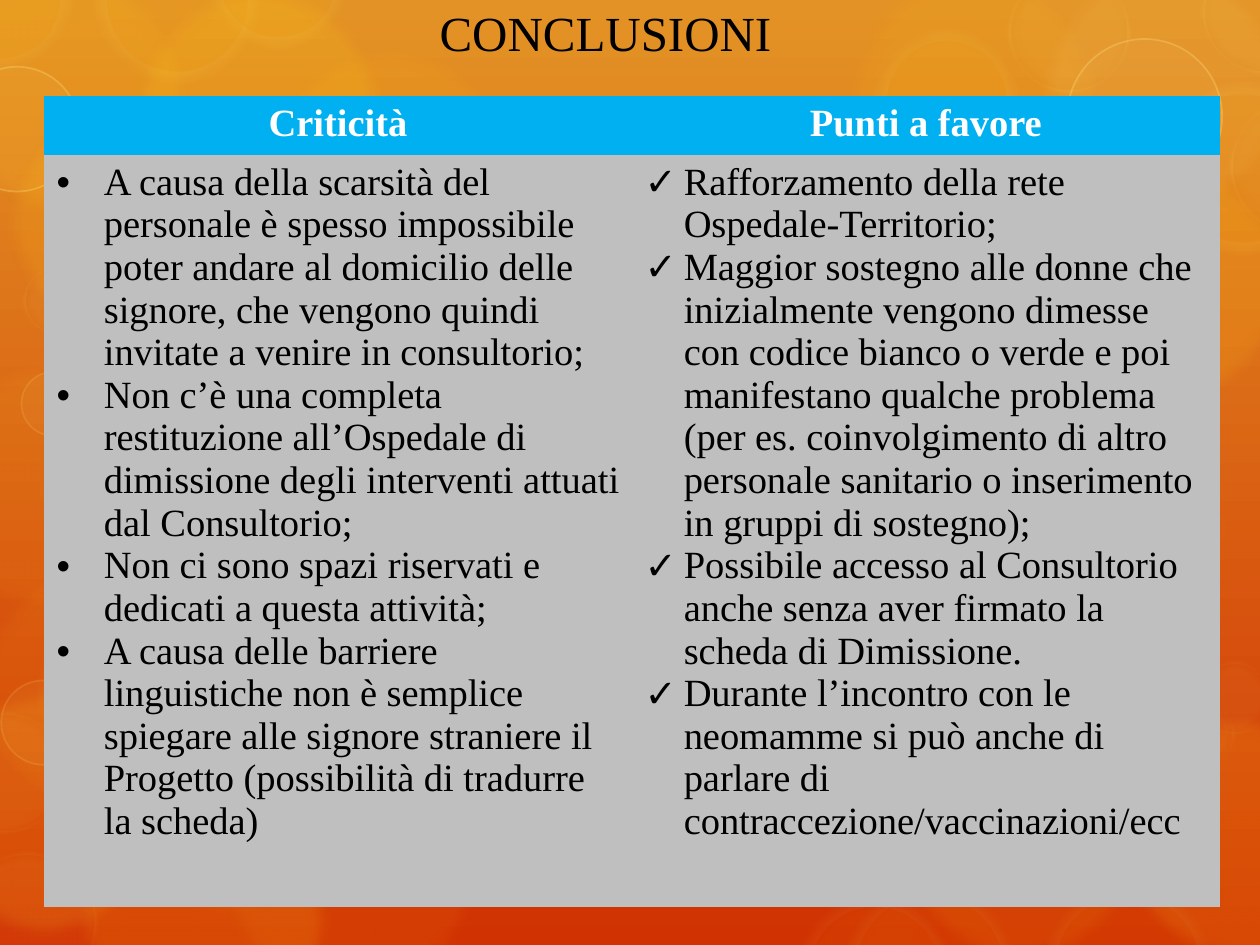
from lxml import etree
from pptx import Presentation, util as u
from pptx.dml.color import RGBColor
from pptx.enum import shapes, text
from pptx.oxml import ns

COLORS = {
    "sky": "E39325", "ember": "D13202", "amber": "FDC61B", "gold": "FFE281",
    "cream": "FEEBAE", "header": "00B0F0", "body": "BFBFBF",
    "white": "FFFFFF", "black": "000000",
}
FONT = "Times New Roman"
NO_GRID_STYLE = "{2D5ABB26-0587-4C30-8999-92F81FD0307C}"

# Each group: fill, fill opacity, (line, points, opacity) or None, soft edge in points,
# then circles as left, top, diameter in tenths of the slide width.
BUBBLES = [
    ("amber", 8, None, 8, [(-0.26, 4.42, 2.09), (0.77, 5.24, 2.09),
                           (1.73, 5.96, 2.09), (-0.7, 2.82, 2.09)]),
    ("amber", 10, None, 8, [(0.57, 1.2, 2.09), (2.05, 0.31, 2.09), (6.69, -0.29, 2.09),
                            (7.06, 5.62, 2.09), (6.75, 2.62, 1.33)]),
    ("amber", 16, None, 8, [(0.57, 6.27, 2.09), (8.81, 5.62, 2.09), (-0.69, 5.41, 2.09)]),
    ("amber", 14, None, 8, [(-0.56, -0.33, 2.09)]),
    ("amber", 20, None, 8, [(1.01, -0.18, 2.09)]),
    ("amber", 15, None, 8, [(0, 0.72, 2.09), (8.2, 1.2, 2.09), (6.69, 0.86, 2.09)]),
    ("amber", 5, None, 8, [(7.29, 4.77, 2.09)]),
    ("gold", 10, None, 8, [(8.2, -0.33, 2.09)]),
    ("amber", 10, ("cream", 14, 6), 8, [
        (9.18, 0.65, 1.37), (6.94, 0.23, 1.14), (7.52, 1.59, 1.33), (7.89, 2.24, 1.14),
        (8.47, 2.91, 0.79), (0.75, -0.65, 1.31), (1.64, -0.74, 1.13), (-0.57, -0.58, 1.14)]),
    ("amber", 6, ("cream", 14, 4), 8, [(0.3, 4.73, 1.53), (6.32, 7.1, 1.24),
                                       (6.7, 7.01, 1.36), (8.28, 7.01, 1.34)]),
    ("gold", 5, ("gold", 5, 30), 5, [
        (0.52, 0.92, 1), (0.35, 1.59, 0.85), (0.17, 2.1, 0.57), (7.99, -0.24, 0.99),
        (9.53, -0.4, 1), (9.75, 0.76, 1.12), (8.3, 0.8, 1.06)]),
    ("gold", 5, ("gold", 5, 15), 5, [
        (-0.35, 6.75, 1.13), (-0.44, 5.64, 0.98), (7.63, 5.73, 0.81), (9, 6.2, 0.66),
        (8.83, 4.48, 0.61), (9.2, 5.53, 0.61), (9.5, 5.24, 0.6), (9.37, 3.7, 0.33),
        (9.18, 3.87, 0.33), (9.41, 4.03, 0.33), (0.3, 3.7, 0.39)]),
    ("gold", 5, ("gold", 1, 30), 0, [(-0.36, 0.53, 0.99), (0.41, 2.06, 0.67),
                                     (8.47, 0.31, 1.23), (8.17, 1.45, 0.67)]),
    ("gold", 5, ("gold", 1, 15), 0, [
        (0.01, 5.4, 0.67), (8.34, 6.14, 0.81), (8.2, 5.39, 0.81),
        (0.17, 2.95, 0.51), (0.52, 3.46, 0.5)]),
]

# Heading, bullet, hanging indent in cm, points
COLUMNS = [
    ("Criticità", "•", 0.95, [
        "A causa della scarsità del personale è spesso impossibile poter andare al "
        "domicilio delle signore, che vengono quindi invitate a venire in consultorio;",
        "Non c’è una completa restituzione all’Ospedale di dimissione degli interventi "
        "attuati dal Consultorio;",
        "Non ci sono spazi riservati e dedicati a questa attività;",
        "A causa delle barriere linguistiche non è semplice spiegare alle signore "
        "straniere il Progetto (possibilità di tradurre la scheda)",
    ]),
    ("Punti a favore", "✓", 0.79, [
        "Rafforzamento della rete Ospedale-Territorio;",
        "Maggior sostegno alle donne che inizialmente vengono dimesse con codice bianco "
        "o verde e poi manifestano qualche problema (per es. coinvolgimento di altro "
        "personale sanitario o inserimento in gruppi di sostegno);",
        "Possibile accesso al Consultorio anche senza aver firmato la scheda di Dimissione.",
        "Durante l’incontro con le neomamme si può anche di parlare di "
        "contraccezione/vaccinazioni/ecc",
    ]),
]


def rgb(name):
    return RGBColor.from_string(COLORS[name])


def paint(fill, color, opacity=100):
    fill.solid()
    fill.fore_color.rgb = rgb(color)
    if opacity < 100:
        tint = fill._xPr.find(".//" + ns.qn("a:srgbClr"))
        etree.SubElement(tint, ns.qn("a:alpha"), val=str(opacity * 1000))


def add_run(paragraph, words, size, color, bold=False):
    run = paragraph.add_run()
    run.text = words
    run.font.name, run.font.size, run.font.bold = FONT, u.Pt(size), bold
    run.font.color.rgb = rgb(color)


def add_bubble(slide, left, top, diameter, fill, opacity, line, soft):
    bubble = slide.shapes.add_shape(shapes.MSO_SHAPE.OVAL, left, top, diameter, diameter)
    bubble.shadow.inherit = False
    paint(bubble.fill, fill, opacity)
    if line:
        color, width, line_opacity = line
        bubble.line.width = u.Pt(width)
        paint(bubble.line.fill, color, line_opacity)
    else:
        bubble.line.fill.background()
    if soft:
        effects = bubble._element.spPr.find(ns.qn("a:effectLst"))
        etree.SubElement(effects, ns.qn("a:softEdge"), rad=str(u.Pt(soft)))


def add_backdrop(slide, left, top, width):
    """Gradient background with translucent bubbles along both sides."""
    fill = slide.background.fill
    fill.gradient()
    fill.gradient_angle = 270
    for stop, color, position in zip(fill.gradient_stops, ("sky", "ember"), (0, 1)):
        stop.color.rgb = rgb(color)
        stop.position = position
    unit = width / 10
    for fill_color, opacity, line, soft, circles in BUBBLES:
        for x, y, diameter in circles:
            add_bubble(slide, u.Cm(left + x * unit), u.Cm(top + y * unit),
                       u.Cm(diameter * unit), fill_color, opacity, line, soft)


def add_title(slide, left, top, width, height):
    title = slide.shapes.add_textbox(u.Cm(left), u.Cm(top), u.Cm(width), u.Cm(height))
    frame = title.text_frame
    frame.word_wrap = True
    frame.auto_size = text.MSO_AUTO_SIZE.SHAPE_TO_FIT_TEXT
    paragraph = frame.paragraphs[0]
    paragraph.alignment = text.PP_ALIGN.CENTER
    add_run(paragraph, "CONCLUSIONI", 28, "black")


def add_bullet(paragraph, mark, indent):
    props = paragraph._p.get_or_add_pPr()
    props.set("marL", str(u.Cm(indent)))
    props.set("indent", str(-u.Cm(indent)))
    etree.SubElement(props, ns.qn("a:buFont"), typeface="Arial")
    etree.SubElement(props, ns.qn("a:buChar"), char=mark)


def add_comparison(slide, left, top, width, height, header_height=1.19):
    frame = slide.shapes.add_table(2, len(COLUMNS), u.Cm(left), u.Cm(top),
                                   u.Cm(width), u.Cm(height))
    table = frame.table
    table.horz_banding = False
    table._tbl.tblPr.find(ns.qn("a:tableStyleId")).text = NO_GRID_STYLE
    table.rows[0].height = u.Cm(header_height)
    table.rows[1].height = u.Cm(height - header_height)
    for column, (heading, mark, indent, points) in enumerate(COLUMNS):
        header, body = table.cell(0, column), table.cell(1, column)
        paint(header.fill, "header")
        paint(body.fill, "body")
        paragraph = header.text_frame.paragraphs[0]
        paragraph.alignment = text.PP_ALIGN.CENTER
        add_run(paragraph, heading, 22, "white", bold=True)
        for i, point in enumerate(points):
            content = body.text_frame
            paragraph = content.add_paragraph() if i else content.paragraphs[0]
            add_bullet(paragraph, mark, indent)
            add_run(paragraph, point, 22, "black")


def main():
    deck = Presentation()
    deck.slide_width, deck.slide_height = u.Cm(25.4), u.Cm(19.05)
    slide = deck.slides.add_slide(deck.slide_layouts[6])
    add_backdrop(slide, 0, 0, 25.4)
    add_title(slide, 5.31, -0.08, 13.79, 1.45)
    add_comparison(slide, 0.89, 1.93, 23.7, 16.36)
    deck.save("out.pptx")


if __name__ == "__main__":
    main()
